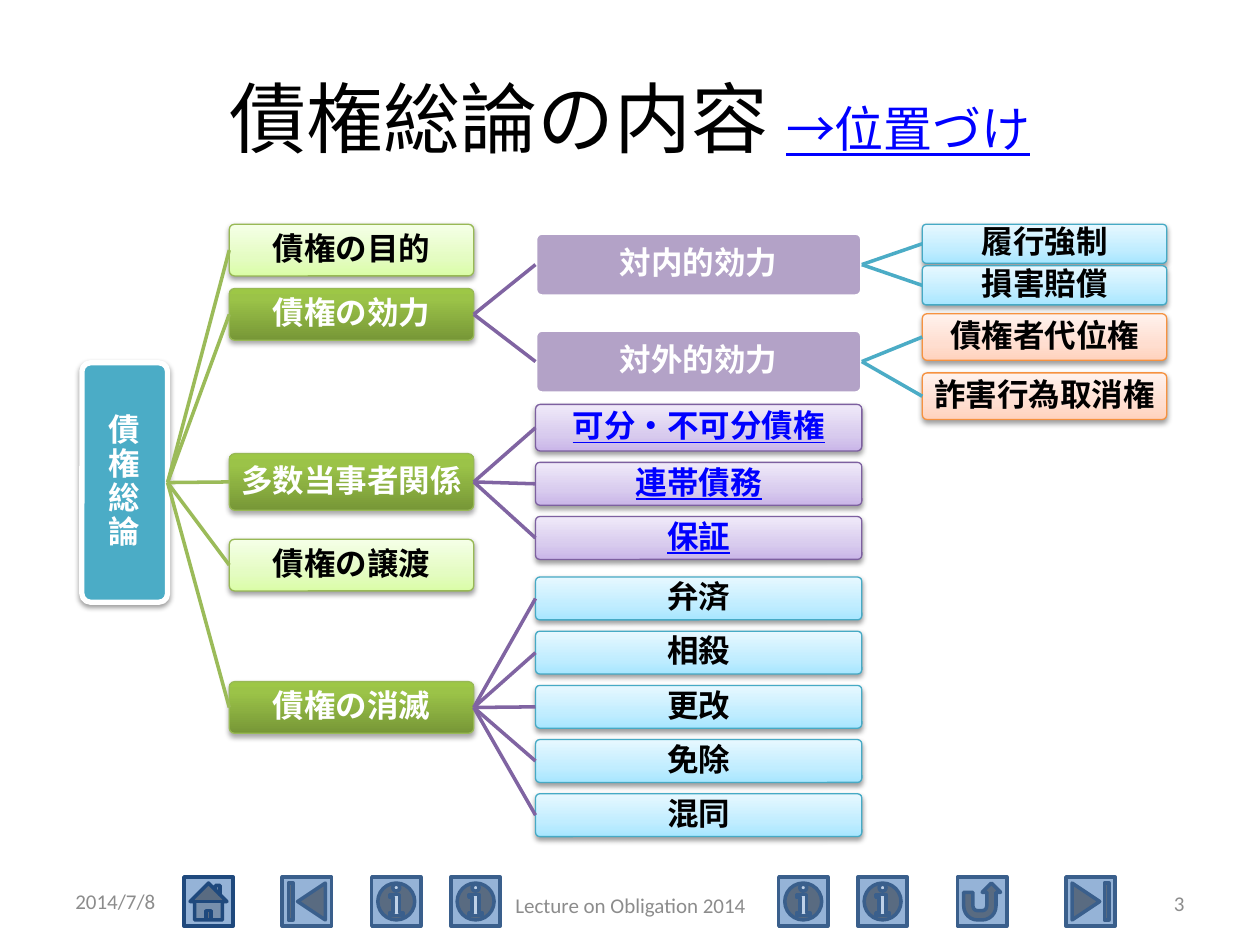
from dataclasses import dataclass

from lxml.etree import SubElement
from pptx import Presentation
from pptx.dml.color import RGBColor
from pptx.enum.shapes import MSO_CONNECTOR, MSO_SHAPE
from pptx.enum.text import MSO_ANCHOR, PP_ALIGN
from pptx.oxml.ns import qn
from pptx.util import Inches, Pt


@dataclass(frozen=True)
class Style:
    """Look of one family of boxes; several stops make a gradient."""
    stops: tuple
    line: str
    text: str = "000000"
    weight: float = 0.75
    shadow: int = 38
    link: bool = False


@dataclass(frozen=True)
class Theme:
    """Colours, font and type sizes of the slide."""
    font: str = "Calibri"
    title: int = 44
    subtitle: int = 28
    label: int = 18
    footer: int = 12
    black: str = "000000"
    link: str = "0000FF"
    grey: str = "8C8C8C"
    button: str = "95B3D7"
    button_line: str = "3A5F8C"
    home_line: str = "1F497D"
    branches: tuple = ("9BBB59", "8064A2", "4BACC6")


@dataclass(frozen=True)
class Node:
    """A box of the tree, its vertical place and its branches."""
    text: str
    style: Style
    top: float
    height: float
    children: tuple = ()


T = Theme()
BLUE_STOPS = ((0, "A7E6FF"), (35, "C1EDFF"), (100, "E7F8FF"))
ROOT = Style(((0, "4BACC6"),), "FFFFFF", "FFFFFF", 3)
PALE = Style(((0, "DAFDA7"), (35, "E4FCC2"), (100, "F5FFE7")), "98B955")
GREEN = Style(((0, "779737"), (80, "9BC348"), (100, "9DC746")), "98B955", "FFFFFF", shadow=35)
FLAT = Style(((0, "B3A2C7"),), "FFFFFF", "FFFFFF", 2, 0)
BLUE = Style(BLUE_STOPS, "46AAC5")
ORANGE = Style(((0, "FFD2BD"), (35, "FFDED0"), (100, "FFF2ED")), "F69240")
LILAC = Style(((0, "C9B5E8"), (35, "D8CBEE"), (100, "F0EAF9")), "7D60A0", T.link, link=True)
COLUMNS = ((0.65, 0.68), (1.82, 1.94), (4.25, 2.59), (7.32, 1.94))


def stack(texts, style, top, height, pitch):
    """Return leaves at an equal pitch."""
    return tuple(Node(t, style, top + i * pitch, height) for i, t in enumerate(texts))


TREE = Node("債\n権\n総\n論", ROOT, 2.88, 1.9, (
    Node("債権の目的", PALE, 1.78, 0.41),
    Node("債権の効力", GREEN, 2.29, 0.41, (
        Node("対内的効力", FLAT, 1.85, 0.5,
             stack(("履行強制", "損害賠償"), BLUE, 1.78, 0.31, 0.33)),
        Node("対外的効力", FLAT, 2.62, 0.5,
             stack(("債権者代位権", "詐害行為取消権"), ORANGE, 2.49, 0.37, 0.47)))),
    Node("多数当事者関係", GREEN, 3.6, 0.45, (
        Node("可分・不可分債権", LILAC, 3.21, 0.37),
        *stack(("連帯債務", "保証"), LILAC, 3.67, 0.34, 0.43))),
    Node("債権の譲渡", PALE, 4.28, 0.41),
    Node("債権の消滅", GREEN, 5.41, 0.41,
         stack(("弁済", "相殺", "更改", "免除", "混同"), BLUE, 4.58, 0.34, 0.43))))


def rgb(value):
    """Turn a hex string into a colour."""
    return RGBColor.from_string(value)


def add_run(p, text, size, color, bold=False, underline=False):
    """Append one formatted run."""
    r = p.add_run()
    r.text = text
    f = r.font
    f.name, f.size, f.bold, f.underline = T.font, Pt(size), bold, underline
    f.color.rgb = rgb(color)


def paint(sp, stops):
    """Fill a shape with one colour or a gradient rising from its foot."""
    if len(stops) == 1:
        sp.fill.solid()
        sp.fill.fore_color.rgb = rgb(stops[0][1])
        return
    sp.fill.gradient()
    sp.fill.gradient_angle = 90
    gs_list = sp._element.spPr.find(qn("a:gradFill")).find(qn("a:gsLst"))
    for gs in list(gs_list):
        gs_list.remove(gs)
    for pos, color in stops:
        gs = SubElement(gs_list, qn("a:gs"), pos=str(pos * 1000))
        SubElement(gs, qn("a:srgbClr"), val=color)


def add_shadow(sp, alpha):
    """Give a shape a soft shadow below it, or none."""
    sp.shadow.inherit = False
    if alpha:
        effects = sp._element.spPr.find(qn("a:effectLst"))
        shadow = SubElement(effects, qn("a:outerShdw"), blurRad=str(Pt(3.1)), dist=str(Pt(1.6)),
                            dir="5400000", rotWithShape="0")
        color = SubElement(shadow, qn("a:srgbClr"), val=T.black)
        SubElement(color, qn("a:alpha"), val=str(alpha * 1000))


def add_box(s, node, level):
    """Draw the labelled box of a node."""
    left, width = COLUMNS[level]
    st = node.style
    sp = s.shapes.add_shape(MSO_SHAPE.ROUNDED_RECTANGLE, Inches(left), Inches(node.top),
                            Inches(width), Inches(node.height))
    sp.adjustments[0] = 0.1
    paint(sp, st.stops)
    sp.line.color.rgb = rgb(st.line)
    sp.line.width = Pt(st.weight)
    add_shadow(sp, st.shadow)
    tf = sp.text_frame
    tf.word_wrap = True
    tf.vertical_anchor = MSO_ANCHOR.MIDDLE
    tf.margin_left = tf.margin_right = tf.margin_top = tf.margin_bottom = Inches(0.02)
    p = tf.paragraphs[0]
    p.alignment = PP_ALIGN.CENTER
    p.line_spacing = 0.9
    p.space_after = Pt(T.label * 0.35)
    for i, line in enumerate(node.text.split("\n")):
        if i:
            p.add_line_break()
        add_run(p, line, T.label, st.text, True, st.link)
    return sp


def add_branch(s, parent, child, color):
    """Join a parent's right side to a child's left side."""
    cx = s.shapes.add_connector(MSO_CONNECTOR.STRAIGHT, 0, 0, 0, 0)
    cx.begin_connect(parent, 3)
    cx.end_connect(child, 1)
    cx.line.color.rgb = rgb(color)
    cx.line.width = Pt(2)
    SubElement(cx._element.spPr, qn("a:effectLst"))


def add_tree(s, node, level=0):
    """Draw a node with all its branches."""
    sp = add_box(s, node, level)
    for child in node.children:
        add_branch(s, sp, add_tree(s, child, level + 1), T.branches[level])
    return sp


def add_button(s, kind, left, line=T.button_line):
    """Draw one navigation button."""
    sp = s.shapes.add_shape(kind, Inches(left), Inches(6.96), Inches(0.39), Inches(0.39))
    paint(sp, ((0, T.button),))
    sp.line.color.rgb = rgb(line)
    sp.line.width = Pt(2)
    add_shadow(sp, 0)


def add_footer(s, text, left, top, width, align):
    """Write one part of the footer."""
    tf = s.shapes.add_textbox(Inches(left), Inches(top), Inches(width), Inches(0.4)).text_frame
    tf.word_wrap = True
    tf.vertical_anchor = MSO_ANCHOR.MIDDLE
    p = tf.paragraphs[0]
    p.alignment = align
    add_run(p, text, T.footer, T.grey)


def add_title(s):
    """Place and write the title."""
    sp = s.shapes.title
    sp.left, sp.top, sp.width, sp.height = (Inches(v) for v in (0.5, 0.3, 9, 1.25))
    sp.text_frame.vertical_anchor = MSO_ANCHOR.MIDDLE
    p = sp.text_frame.paragraphs[0]
    p.alignment = PP_ALIGN.CENTER
    add_run(p, "債権総論の内容 ", T.title, T.black)
    add_run(p, "→位置づけ", T.subtitle, T.link, underline=True)


def main():
    """Build the slide and save it."""
    prs = Presentation()
    prs.slide_width, prs.slide_height = Inches(10), Inches(7.5)
    s = prs.slides.add_slide(prs.slide_layouts[5])
    add_title(s)
    add_button(s, MSO_SHAPE.ACTION_BUTTON_HOME, 1.46, T.home_line)
    add_button(s, MSO_SHAPE.ACTION_BUTTON_BEGINNING, 2.24)
    for left in (2.95, 3.58, 6.18, 6.81):
        add_button(s, MSO_SHAPE.ACTION_BUTTON_INFORMATION, left)
    add_button(s, MSO_SHAPE.ACTION_BUTTON_RETURN, 7.6)
    add_button(s, MSO_SHAPE.ACTION_BUTTON_END, 8.46)
    add_footer(s, "2014/7/8", 0.5, 6.95, 2.33, PP_ALIGN.LEFT)
    add_footer(s, "Lecture on Obligation 2014", 3.42, 6.98, 3.17, PP_ALIGN.CENTER)
    add_footer(s, "3", 7.17, 6.97, 2.33, PP_ALIGN.RIGHT)
    add_tree(s, TREE)
    prs.save("out.pptx")


if __name__ == "__main__":
    main()
